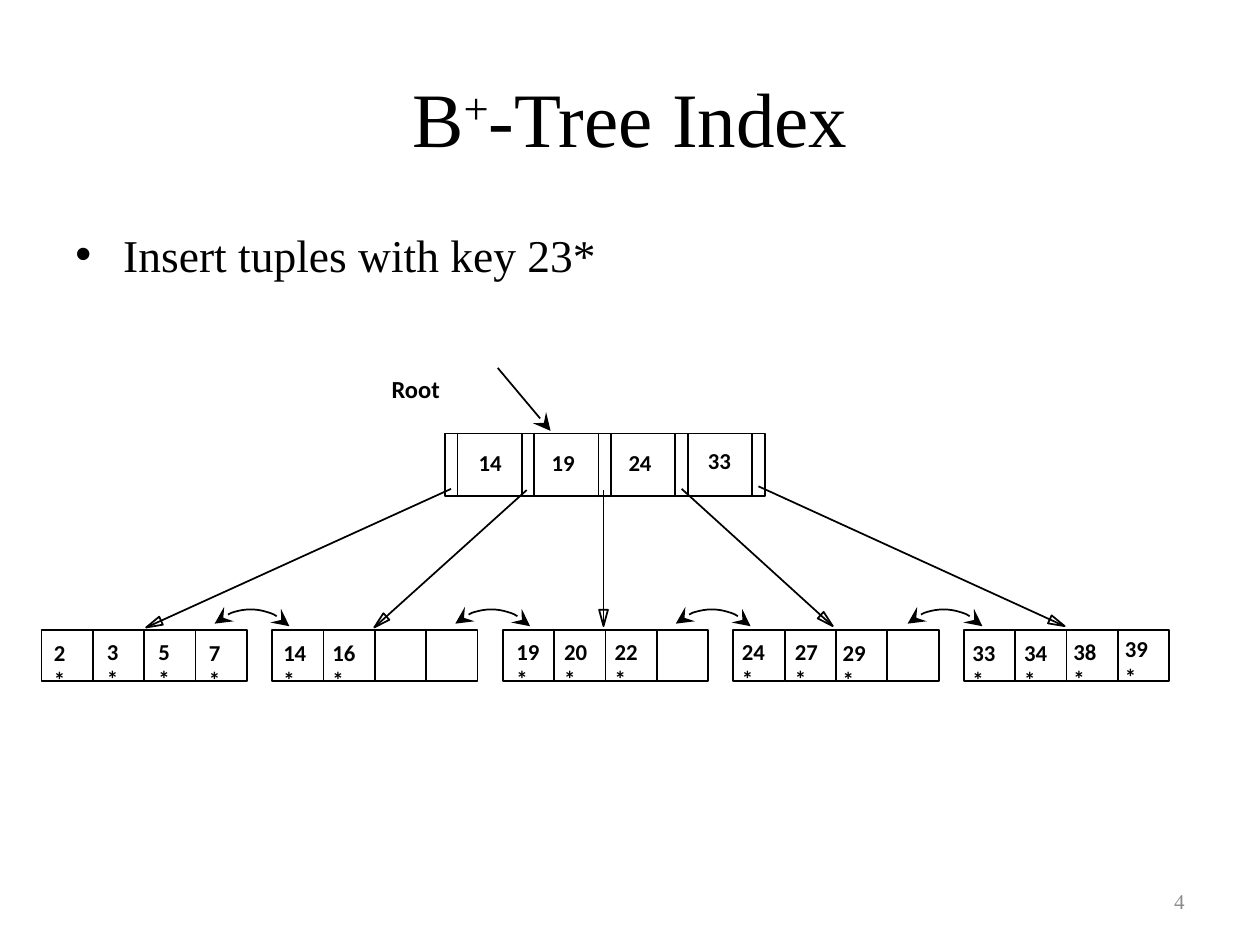
import math

import lxml.etree
import pptx
import pptx.dml.color
import pptx.enum.shapes
import pptx.enum.text
import pptx.oxml.ns
import pptx.util

Inches = pptx.util.Inches
Align = pptx.enum.text.PP_ALIGN
Anchor = pptx.enum.text.MSO_ANCHOR
Preset = pptx.enum.shapes.MSO_SHAPE
qn = pptx.oxml.ns.qn

COLORS = {"ink": "000000", "number": "8C8C8C"}

TITLE = {"name": "Times New Roman", "size": pptx.util.Pt(44)}
BODY = {"name": "Times New Roman", "size": pptx.util.Pt(26)}
NUMBER = {"name": "Times New Roman", "size": pptx.util.Pt(12)}
ROOT = {"name": "Calibri", "size": pptx.util.Pt(14), "bold": True}
KEY = {"name": "Calibri", "size": pptx.util.Pt(13), "bold": True}

ROOT_LEFT, ROOT_TOP, ROOT_HEIGHT = 3.53, 3.44, 0.5
ROOT_STEP, POINTER_WIDTH = 0.61, 0.1
ROOT_KEYS = [("14", 3.7, 3.51), ("19", 4.28, 3.51), ("24", 4.89, 3.51), ("33", 5.52, 3.5)]

LEAF_LEFT, LEAF_TOP = 0.33, 5
LEAF_STEP, LEAF_WIDTH, LEAF_COUNT, LEAF_CELLS = 1.83, 1.63, 5, 4
LEAF_KEYS = [
    ("2*", 0.33, 5.02), ("3*", 0.75, 5.01), ("5*", 1.16, 5.01), ("7*", 1.56, 5.02),
    ("14*", 2.15, 5.02), ("16*", 2.54, 5.02),
    ("19*", 4, 5.01), ("20*", 4.38, 5.01), ("22*", 4.78, 5.01),
    ("24*", 5.79, 5.01), ("27*", 6.21, 5.01), ("29*", 6.59, 5.02),
    ("33*", 7.62, 5.02), ("34*", 8.03, 5.02), ("38*", 8.42, 5.01), ("39*", 8.83, 4.99),
]

POINTERS = [
    ((3.58, 3.88), (1.16, 4.98)),
    ((4.18, 3.89), (2.97, 4.98)),
    ((4.79, 3.89), (4.79, 4.97)),
    ((5.41, 3.88), (6.61, 4.97)),
    ((6.02, 3.86), (8.45, 4.97)),
]
SIBLING_LEFTS = [1.79, 3.7, 5.45, 7.29]
SIBLING_TOP, SIBLING_RADIUS = 4.75, 0.42


class TreeSlide:
    def __init__(self, slide):
        self.slide = slide
        self.line_width = pptx.util.Pt(1)

    def color(self, name):
        return pptx.dml.color.RGBColor.from_string(COLORS[name])

    def outline(self, shape, *ends):
        shape.line.color.rgb = self.color("ink")
        shape.line.width = self.line_width
        line = shape._element.spPr.find(qn("a:ln"))
        for end in ends:
            lxml.etree.SubElement(line, qn(f"a:{end}"), type="stealth", w="lg", len="lg")

    def hollow(self, shape, *ends):
        shape.shadow.inherit = False
        shape.fill.background()
        self.outline(shape, *ends)

    def text(self, box, runs, font, align=Align.LEFT, anchor=Anchor.TOP, color="ink"):
        frame = self.slide.shapes.add_textbox(*map(Inches, box)).text_frame
        frame.word_wrap = True
        frame.vertical_anchor = anchor
        paragraph = frame.paragraphs[0]
        paragraph.alignment = align
        for content, baseline in runs:
            run = paragraph.add_run()
            run.text = content
            for attribute, value in font.items():
                setattr(run.font, attribute, value)
            run.font.color.rgb = self.color(color)
            if baseline:
                run._r.get_or_add_rPr().set("baseline", str(baseline))
        return paragraph

    def bullet(self, box, content, font):
        paragraph = self.text(box, [(content, 0)], font, Align.JUSTIFY)
        paragraph.space_before = pptx.util.Pt(5.2)
        properties = paragraph._p.get_or_add_pPr()
        properties.set("marL", str(Inches(0.38)))
        properties.set("indent", str(-Inches(0.38)))
        lxml.etree.SubElement(properties, qn("a:buFont"), typeface="Arial")
        lxml.etree.SubElement(properties, qn("a:buChar"), char="•")

    def cell(self, left, top, width, height):
        box = map(Inches, (left, top, width, height))
        self.hollow(self.slide.shapes.add_shape(Preset.RECTANGLE, *box))

    def line(self, start, end, *ends):
        connector = self.slide.shapes.add_connector(
            pptx.enum.shapes.MSO_CONNECTOR.STRAIGHT, *map(Inches, (*start, *end)))
        self.outline(connector, *ends)
        lxml.etree.SubElement(connector._element.spPr, qn("a:effectLst"))

    def freeform(self, start, points, close):
        builder = self.slide.shapes.build_freeform(*map(Inches, start))
        builder.add_line_segments([tuple(map(Inches, point)) for point in points], close=close)
        return builder.convert_to_shape()

    def pointer(self, start, tip, length=0.13, half_width=0.035):
        self.line(start, tip)
        angle = math.atan2(tip[1] - start[1], tip[0] - start[0])
        cosine, sine = math.cos(angle), math.sin(angle)
        base_x, base_y = tip[0] - length * cosine, tip[1] - length * sine
        corners = [(base_x - side * sine, base_y + side * cosine)
                   for side in (half_width, -half_width)]
        self.hollow(self.freeform(tip, corners, True))

    def sibling_link(self, left, top, radius):
        shape = self.freeform((left, top), [(left + radius, top + radius)], False)
        segment = next(shape._element.iter(qn("a:lnTo")))
        arc = lxml.etree.Element(
            qn("a:arcTo"), wR=str(shape.width), hR=str(shape.height),
            stAng="16200000", swAng="5400000")
        segment.getparent().replace(segment, arc)
        shape.rotation = 317
        self.hollow(shape, "headEnd", "tailEnd")


def main():
    presentation = pptx.Presentation()
    presentation.slide_width = Inches(10)
    presentation.slide_height = Inches(7.5)
    tree = TreeSlide(presentation.slides.add_slide(presentation.slide_layouts[6]))

    tree.text((0.5, 0.3, 9, 1.25), [("B", 0), ("+", 30000), ("-Tree Index", 0)],
              TITLE, Align.CENTER, Anchor.MIDDLE)
    tree.bullet((0.5, 1.75, 9, 4.95), "Insert tuples with key 23*", BODY)
    tree.text((7.17, 6.95, 2.33, 0.4), [("4", 0)], NUMBER,
              Align.RIGHT, Anchor.MIDDLE, "number")

    for index in range(len(ROOT_KEYS)):
        left = ROOT_LEFT + index * ROOT_STEP
        separator = left + POINTER_WIDTH
        tree.cell(left, ROOT_TOP, ROOT_STEP, ROOT_HEIGHT)
        tree.line((separator, ROOT_TOP), (separator, ROOT_TOP + ROOT_HEIGHT))
    tree.cell(ROOT_LEFT + len(ROOT_KEYS) * ROOT_STEP, ROOT_TOP, POINTER_WIDTH, ROOT_HEIGHT)

    cell_size = LEAF_WIDTH / LEAF_CELLS
    for leaf in range(LEAF_COUNT):
        for index in range(LEAF_CELLS):
            left = LEAF_LEFT + leaf * LEAF_STEP + index * cell_size
            tree.cell(left, LEAF_TOP, cell_size, cell_size)

    for start, tip in POINTERS:
        tree.pointer(start, tip)

    tree.text((3.01, 2.92, 0.64, 0.33), [("Root", 0)], ROOT)
    for key, left, top in ROOT_KEYS:
        tree.text((left, top, 0.4, 0.32), [(key, 0)], KEY)
    for key, left, top in LEAF_KEYS:
        width = 0.37 if len(key) == 2 else 0.43
        tree.text((left, top, width, 0.32), [(key, 0)], KEY)

    tree.line((3.95, 2.92), (4.37, 3.42), "tailEnd")
    for left in SIBLING_LEFTS:
        tree.sibling_link(left, SIBLING_TOP, SIBLING_RADIUS)

    presentation.save("out.pptx")


if __name__ == "__main__":
    main()
